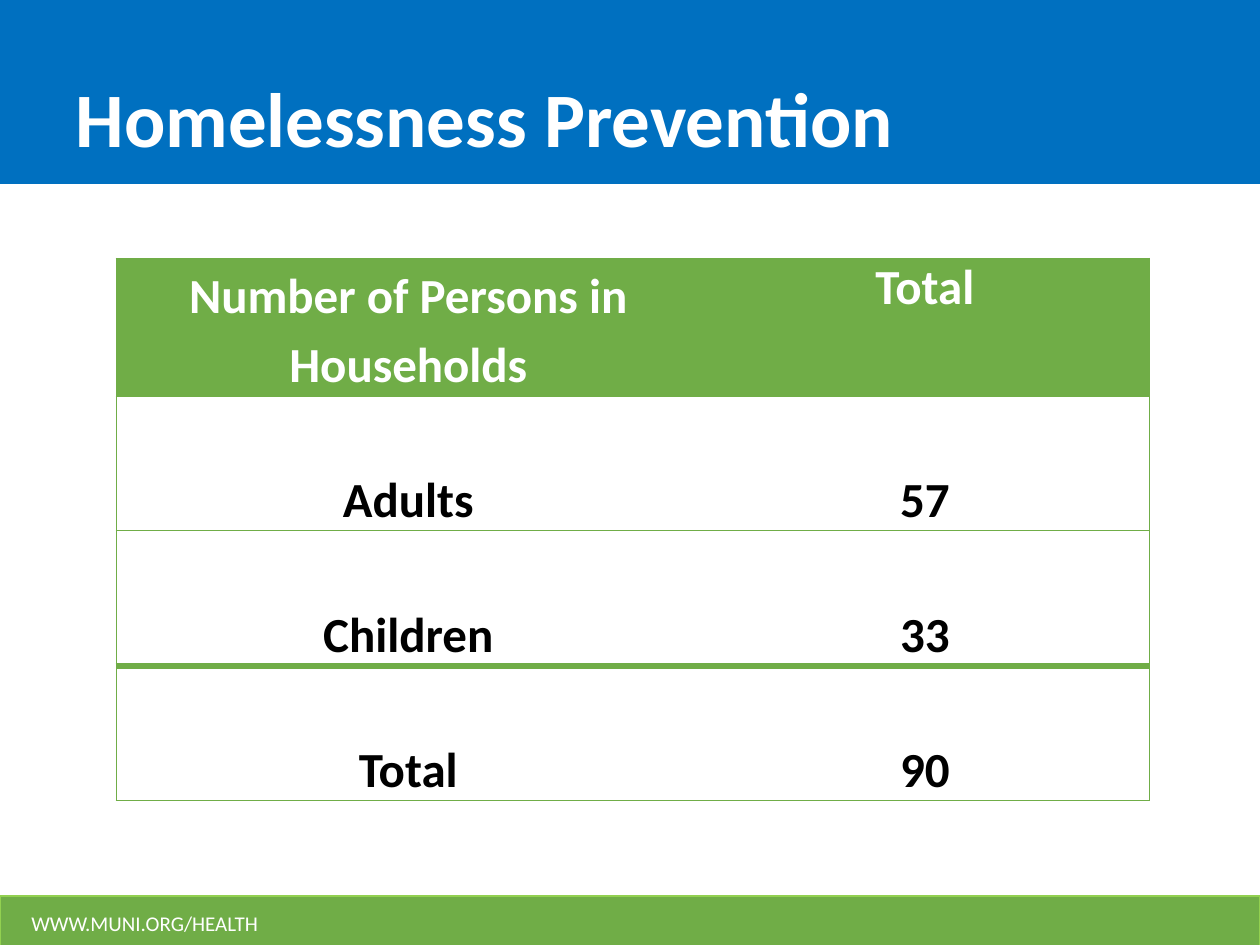
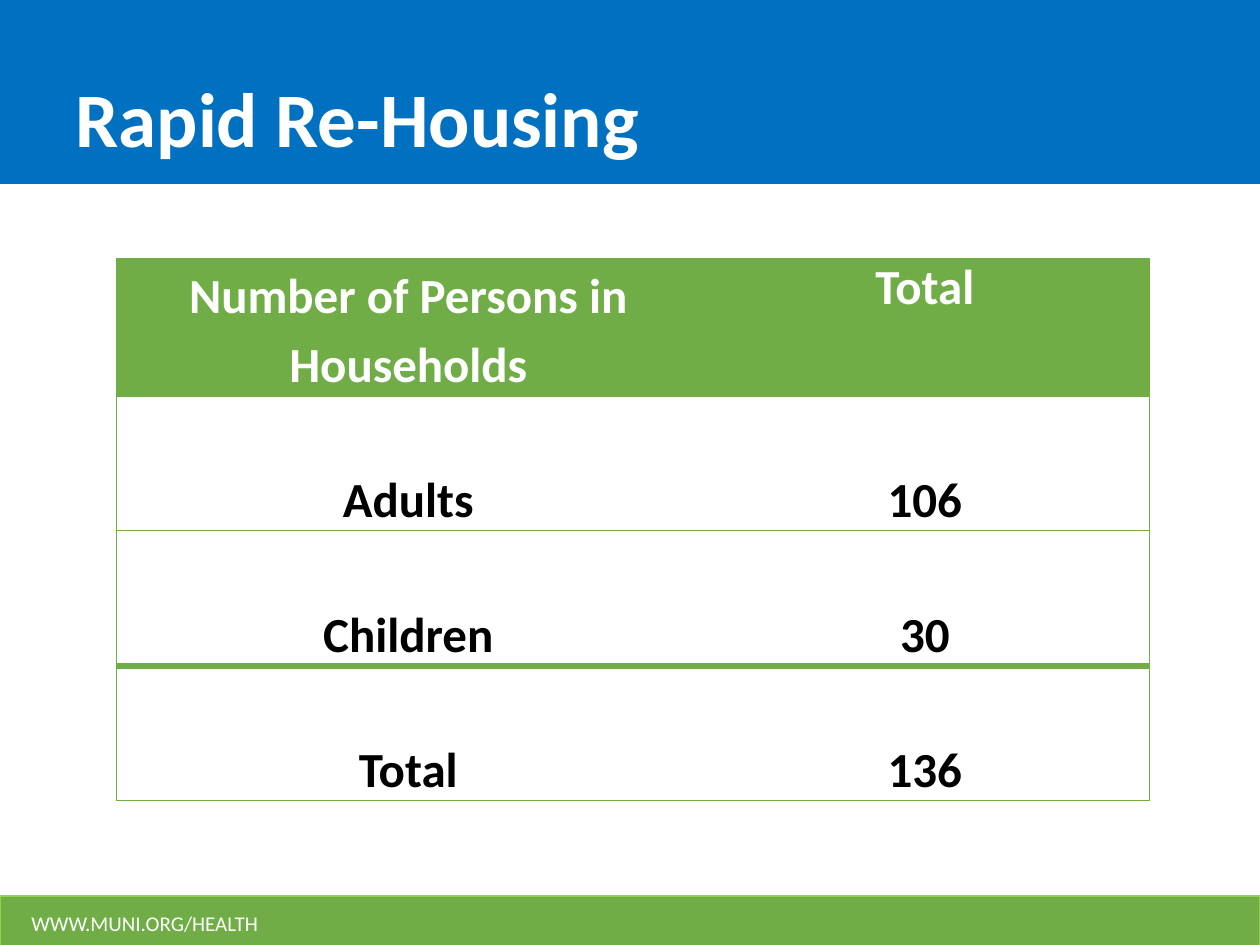
"""Two housing slides, each with a table of persons served."""
from lxml import etree
from pptx import Presentation
from pptx.dml.color import RGBColor
from pptx.enum import shapes, text
from pptx.oxml import ns
from pptx.util import Inches, Pt

HUES = {"blue": "0070C0", "green": "70AD47", "lime": "92D050",
        "white": "FFFFFF", "black": "000000"}
DATA = [("Homelessness Prevention", ["57", "33", "90"]),
        ("Rapid Re-Housing", ["106", "30", "136"])]
HEADS = ["Number of Persons in Households", "Total"]
NAMES = ["Adults", "Children", "Total"]
EDGES = {"lnL": [0.5, None], "lnR": [None, 0.5]}
RULES = [0.5, 0.5, 0.5, 4, 0.5]
PLAIN = "{2D5ABB26-0587-4C30-8999-92F81FD0307C}"


def write(para, words, size, hue, bold=False):
    run = para.add_run()
    run.text = words
    run.font.name = "Calibri"
    run.font.size = Pt(size)
    run.font.bold = bold
    run.font.color.rgb = RGBColor.from_string(HUES[hue])


def border(cell, sides):
    props = cell._tc.get_or_add_tcPr()
    for spot, (side, width) in enumerate(sides.items()):
        line = etree.Element(ns.qn("a:" + side))
        if width:
            line.set("w", str(Pt(width)))
            fill = etree.SubElement(line, ns.qn("a:solidFill"))
            etree.SubElement(fill, ns.qn("a:srgbClr"), val=HUES["green"])
        else:
            etree.SubElement(line, ns.qn("a:noFill"))
        props.insert(spot, line)


deck = Presentation()
deck.slide_width, deck.slide_height = Inches(10), Inches(7.5)
layout = deck.slide_layouts[5]
pages = [deck.slides.add_slide(layout) for _ in DATA]

draft = pages[0].shapes
parts = []
for top, height, hue, edge in [(0, 1.46, "blue", None), (7.11, 0.4, "green", "lime")]:
    band = draft.add_shape(shapes.MSO_SHAPE.RECTANGLE, 0, Inches(top),
                           Inches(10), Inches(height))
    band.shadow.inherit = False
    band.fill.solid()
    band.fill.fore_color.rgb = RGBColor.from_string(HUES[hue])
    if edge:
        band.line.color.rgb = RGBColor.from_string(HUES[edge])
        band.line.width = Pt(1)
    else:
        band.line.fill.background()
    parts.append(band)
site = draft.add_textbox(Inches(0.15), Inches(7.13), Inches(2.69), Inches(0.4))
site.text_frame.word_wrap = True
site.text_frame.vertical_anchor = text.MSO_ANCHOR.MIDDLE
write(site.text_frame.paragraphs[0], "WWW.MUNI.ORG/HEALTH", 12, "white")
parts.append(site)

for spot, part in enumerate(parts, 2):
    layout.shapes._spTree.insert(spot, part._element)

for page, (name, counts) in zip(pages, DATA):
    title = page.shapes.title
    title.left, title.top = Inches(0.5), Inches(0)
    title.width, title.height = Inches(8.81), Inches(1.34)
    frame = title.text_frame
    frame.word_wrap = True
    frame.auto_size = text.MSO_AUTO_SIZE.NONE
    frame.vertical_anchor = text.MSO_ANCHOR.BOTTOM
    frame.paragraphs[0].alignment = text.PP_ALIGN.LEFT
    write(frame.paragraphs[0], name, 44, "white", True)

    rows = [HEADS, *zip(NAMES, counts)]
    table = page.shapes.add_table(len(rows), 2, Inches(0.92), Inches(2.05),
                                  Inches(8.2), Inches(4.28)).table
    table.horz_banding = False
    table._tbl.tblPr.find(ns.qn("a:tableStyleId")).text = PLAIN
    table.columns[0].width, table.columns[1].width = Inches(4.64), Inches(3.56)
    for i, row in enumerate(rows):
        table.rows[i].height = Inches(1.07)
        for j, words in enumerate(row):
            cell = table.cell(i, j)
            cell.margin_left = cell.margin_right = Inches(0.08)
            cell.margin_top = cell.margin_bottom = 0
            para = cell.text_frame.paragraphs[0]
            para.alignment = text.PP_ALIGN.CENTER
            if i or not j:
                para.line_spacing = 1.15
            if i:
                cell.vertical_anchor = text.MSO_ANCHOR.BOTTOM
                para.space_after = Pt(10)
                cell.fill.background()
            else:
                cell.vertical_anchor = text.MSO_ANCHOR.TOP
                cell.fill.solid()
                cell.fill.fore_color.rgb = RGBColor.from_string(HUES["green"])
            write(para, words, 28, "black" if i else "white", True)
            sides = {side: widths[j] for side, widths in EDGES.items()}
            border(cell, {**sides, "lnT": RULES[i], "lnB": RULES[i + 1]})

deck.save("out.pptx")
